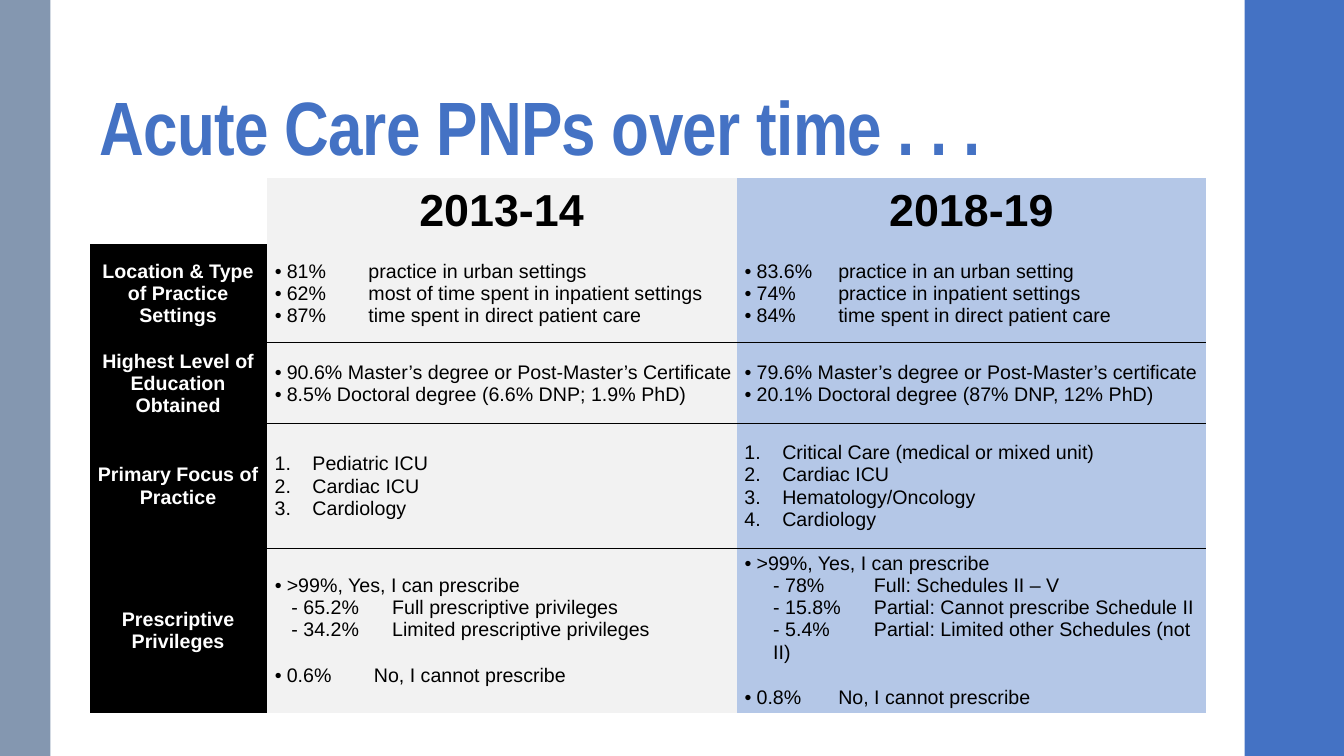
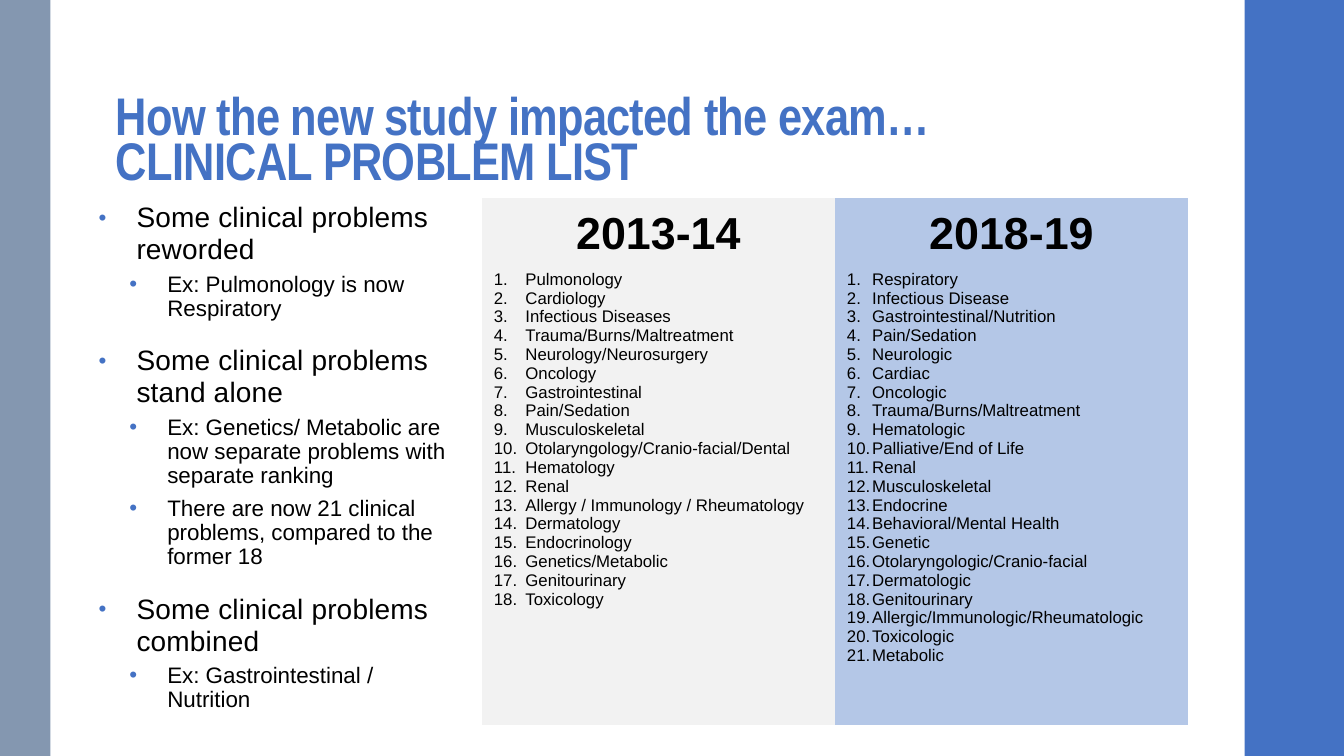
import pptx
import pptx.util
import pptx.dml.color
import pptx.enum.shapes
import pptx.enum.text
import pptx.oxml
import pptx.oxml.ns

Pt = pptx.util.Pt
ALIGN = pptx.enum.text.PP_ALIGN
ANCHOR = pptx.enum.text.MSO_ANCHOR
PLAIN = "{2D5ABB26-0587-4C30-8999-92F81FD0307C}"
COLORS = {
    "blue": "4472C4", "slate": "8497B0", "pale": "B4C7E7",
    "gray": "F2F2F2", "black": "000000", "white": "FFFFFF",
}
STYLES = {
    "head": dict(size=32, bold=True, align=ALIGN.CENTER),
    "side": dict(size=14, bold=True, align=ALIGN.CENTER, color="white"),
    "dot": dict(size=14, left=13.7, hang=8.6, mark="•"),
    "last": dict(size=14, left=13.7, hang=8.6, mark="•", before=17),
    "num": dict(size=14, left=32, hang=27, mark="1."),
    "sub": dict(size=14, left=17, tab=77),
    "deep": dict(size=14, left=25.5, tab=89),
    "old": dict(size=12, left=22.5, hang=22.5, mark="1."),
    "new": dict(size=12, left=18, hang=18, mark="1."),
    "main": dict(size=20, left=27, hang=27, mark="•", tint="blue", scale=80,
                 line=0.95, before=14, after=2, space=0.1),
    "point": dict(size=16, left=49, hang=27, mark="•", tint="blue",
                  line=0.9, before=3, after=3),
}
YEARS = ["2013-14", "2018-19"]
TOPICS = [
    ("Location & Type of Practice Settings",
     [("dot", "81%\tpractice in urban settings"),
      ("dot", "62%\tmost of time spent in inpatient settings"),
      ("dot", "87%\ttime spent in direct patient care")],
     [("dot", "83.6%\tpractice in an urban setting"),
      ("dot", "74%\tpractice in inpatient settings"),
      ("dot", "84%\ttime spent in direct patient care")]),
    ("Highest Level of Education Obtained",
     [("dot", "90.6% Master’s degree or Post-Master’s Certificate"),
      ("dot", "8.5% Doctoral degree (6.6% DNP; 1.9% PhD)")],
     [("dot", "79.6% Master’s degree or Post-Master’s certificate"),
      ("dot", "20.1% Doctoral degree (87% DNP, 12% PhD)")]),
    ("Primary Focus of Practice",
     [("num", "Pediatric ICU"), ("num", "Cardiac ICU"), ("num", "Cardiology")],
     [("num", "Critical Care (medical or mixed unit)"), ("num", "Cardiac ICU"),
      ("num", "Hematology/Oncology"), ("num", "Cardiology")]),
    ("Prescriptive Privileges",
     [("dot", ">99%, Yes, I can prescribe"),
      ("sub", "- 65.2%\tFull prescriptive privileges"),
      ("sub", "- 34.2%\tLimited prescriptive privileges"),
      ("last", "0.6%\t No, I cannot prescribe")],
     [("dot", ">99%, Yes, I can prescribe"),
      ("deep", "- 78%\tFull: Schedules II – V"),
      ("deep", "- 15.8%\tPartial: Cannot prescribe Schedule II"),
      ("deep", "- 5.4%\tPartial: Limited other Schedules (not II)"),
      ("last", "0.8%\tNo, I cannot prescribe")]),
]
POINTS = [
    ("main", "Some clinical problems reworded"),
    ("point", "Ex: Pulmonology is now Respiratory"),
    ("main", "Some clinical problems stand alone"),
    ("point", "Ex: Genetics/ Metabolic are now separate problems with separate ranking"),
    ("point", "There are now 21 clinical problems, compared to the former 18"),
    ("main", "Some clinical problems combined"),
    ("point", "Ex: Gastrointestinal / Nutrition"),
]
OLD = [
    "Pulmonology", "Cardiology", "Infectious Diseases",
    "Trauma/Burns/Maltreatment", "Neurology/Neurosurgery", "Oncology",
    "Gastrointestinal", "Pain/Sedation", "Musculoskeletal",
    "Otolaryngology/Cranio-facial/Dental", "Hematology", "Renal",
    "Allergy / Immunology / Rheumatology", "Dermatology", "Endocrinology",
    "Genetics/Metabolic", "Genitourinary", "Toxicology",
]
NEW = [
    "Respiratory", "Infectious Disease", "Gastrointestinal/Nutrition",
    "Pain/Sedation", "Neurologic", "Cardiac", "Oncologic",
    "Trauma/Burns/Maltreatment", "Hematologic", "Palliative/End of Life",
    "Renal", "Musculoskeletal", "Endocrine", "Behavioral/Mental Health",
    "Genetic", "Otolaryngologic/Cranio-facial", "Dermatologic",
    "Genitourinary", "Allergic/Immunologic/Rheumatologic", "Toxicologic",
    "Metabolic",
]


def rgb(name):
    """Return the named colour."""
    return pptx.dml.color.RGBColor.from_string(COLORS[name])


def node(xml):
    """Parse one DrawingML element."""
    spot = xml.index(" ") if " " in xml.split(">")[0] else xml.index(">")
    return pptx.oxml.parse_xml(xml[:spot] + " " + pptx.oxml.ns.nsdecls("a") + xml[spot:])


def bullet(par, mark, tint, scale):
    """Give a paragraph a bullet or automatic number."""
    props = par._p.get_or_add_pPr()
    if tint:
        props.append(node(f'<a:buClr><a:srgbClr val="{COLORS[tint]}"/></a:buClr>'))
    if scale:
        props.append(node(f'<a:buSzPct val="{scale * 1000}"/>'))
    props.append(node('<a:buFont typeface="Arial"/>'))
    if mark == "1.":
        props.append(node('<a:buAutoNum type="arabicPeriod"/>'))
    else:
        props.append(node(f'<a:buChar char="{mark}"/>'))


def style(par, size, bold=False, align=ALIGN.LEFT, color="black", font="Arial",
          left=0, hang=0, mark=None, tint=None, scale=None, tab=None,
          line=1.0, before=0, after=0, space=0):
    """Format one paragraph and its text."""
    props = par._p.get_or_add_pPr()
    props.set("marL", str(Pt(left)))
    props.set("indent", str(-Pt(hang)))
    if mark:
        bullet(par, mark, tint, scale)
    if tab:
        props.append(node(f'<a:tabLst><a:tab pos="{Pt(tab)}" algn="l"/></a:tabLst>'))
    par.alignment = align
    par.line_spacing = line
    par.space_before, par.space_after = Pt(before), Pt(after)
    par.font.name, par.font.size, par.font.bold = font, Pt(size), bold
    par.font.color.rgb = rgb(color)
    if space:
        props.get_or_add_defRPr().set("spc", str(round(space * 100)))


def write(frame, items):
    """Fill a text frame with styled paragraphs."""
    for i, (kind, text) in enumerate(items):
        par = frame.add_paragraph() if i else frame.paragraphs[0]
        par.text = text
        style(par, **STYLES[kind])


def band(slide, left, width, color):
    """Draw a full-height side band."""
    kind = pptx.enum.shapes.MSO_SHAPE.RECTANGLE
    shape = slide.shapes.add_shape(kind, Pt(left), 0, Pt(width), Pt(540))
    shape.shadow.inherit = False
    shape.fill.solid()
    shape.fill.fore_color.rgb = rgb(color)
    shape.line.fill.background()


def start(deck, text, left, top, size, line):
    """Add a slide with its side bands and title."""
    slide = deck.slides.add_slide(deck.slide_layouts[5])
    band(slide, 889, 71, "blue")
    band(slide, 0, 36, "slate")
    title = slide.shapes.title
    title.left, title.top, title.width, title.height = Pt(left), Pt(top), Pt(832), Pt(76)
    frame = title.text_frame
    frame.auto_size = pptx.enum.text.MSO_AUTO_SIZE.NONE
    frame.word_wrap = True
    frame.vertical_anchor = ANCHOR.BOTTOM
    frame.margin_left = frame.margin_right = Pt(7.2)
    frame.margin_top, frame.margin_bottom = Pt(2.2), Pt(3.6)
    par = frame.paragraphs[0]
    par.text = text
    style(par, size, bold=True, color="blue", font="Arial Narrow", line=line, space=-0.5)
    return slide


def grid(slide, left, top, cols, rows):
    """Add a plain table of the given column widths and row heights."""
    frame = slide.shapes.add_table(len(rows), len(cols), Pt(left), Pt(top),
                                   Pt(sum(cols)), Pt(sum(rows)))
    table = frame.table
    table.first_row = table.horz_banding = False
    table._tbl.tblPr.find(pptx.oxml.ns.qn("a:tableStyleId")).text = PLAIN
    for col, width in zip(table.columns, cols):
        col.width = Pt(width)
    for row, height in zip(table.rows, rows):
        row.height = Pt(height)
    return table


def put(cell, items, color, side=0.7, anchor=ANCHOR.MIDDLE):
    """Fill and write one table cell."""
    cell.margin_left = cell.margin_right = Pt(side)
    cell.margin_top, cell.margin_bottom = Pt(0.7), 0
    cell.vertical_anchor = anchor
    cell.fill.solid()
    cell.fill.fore_color.rgb = rgb(color)
    write(cell.text_frame, items)


def rule(cell, edge):
    """Draw a black line on the T or B edge of a cell."""
    cell._tc.get_or_add_tcPr().insert(0, node(
        f'<a:ln{edge} w="12700"><a:solidFill><a:srgbClr val="{COLORS["black"]}"/>'
        f'</a:solidFill></a:ln{edge}>'))


def trends(deck):
    """Build the comparison of practice over time."""
    slide = start(deck, "Acute Care PNPs over time . . .", 64, 50.5, 54, 0.9)
    table = grid(slide, 64, 127, [126.5, 335.6, 335.6], [47.4, 70.3, 57.6, 89.3, 117.7])
    fills = ["gray", "pale"]
    for c, (year, fill) in enumerate(zip(YEARS, fills), 1):
        put(table.cell(0, c), [("head", year)], fill)
    for r, (topic, *facts) in enumerate(TOPICS, 1):
        put(table.cell(r, 0), [("side", topic)], "black")
        for c, (items, fill) in enumerate(zip(facts, fills), 1):
            cell = table.cell(r, c)
            put(cell, items, fill)
            if r < len(TOPICS):
                rule(cell, "B")
            if r > 1:
                rule(cell, "T")


def exam(deck):
    """Build the clinical problem lists."""
    slide = start(deck, "How the new study impacted the exam…\vCLINICAL PROBLEM LIST",
                  75.6, 62.6, 37.8, 0.7)
    box = slide.shapes.add_textbox(Pt(63.4), Pt(141), Pt(265.7), Pt(391.7))
    box.text_frame.word_wrap = True
    write(box.text_frame, POINTS)
    table = grid(slide, 344.2, 141.4, [252.2, 252.2], [50.8, 326])
    lists = [("old", OLD, "gray"), ("new", NEW, "pale")]
    for c, (year, (kind, names, fill)) in enumerate(zip(YEARS, lists)):
        put(table.cell(0, c), [("head", year)], fill)
        put(table.cell(1, c), [(kind, name) for name in names], fill, 8.6, ANCHOR.TOP)


def main():
    """Build and save the deck."""
    deck = pptx.Presentation()
    deck.slide_width, deck.slide_height = Pt(960), Pt(540)
    trends(deck)
    exam(deck)
    deck.save("out.pptx")


if __name__ == "__main__":
    main()
